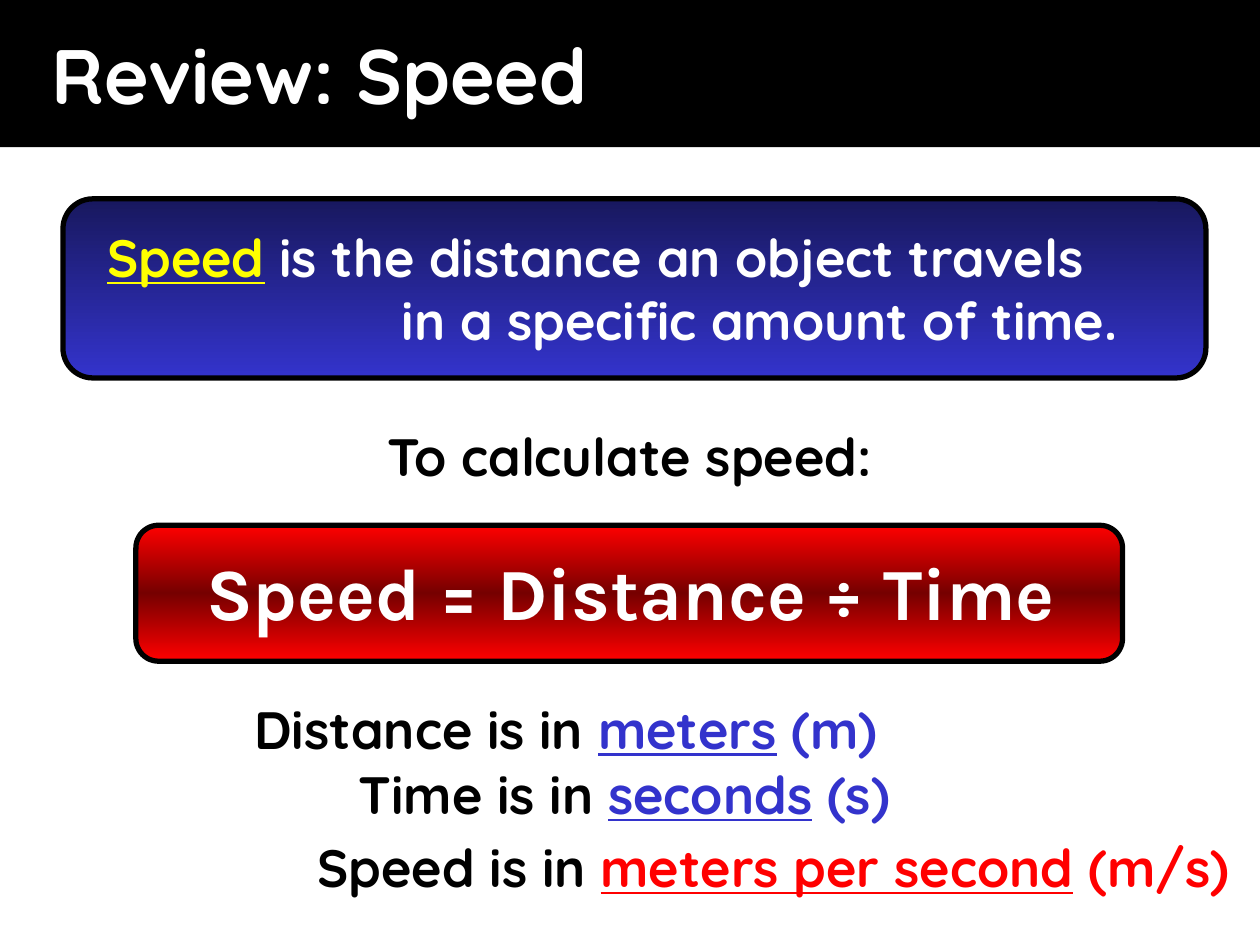
from copy import deepcopy

from pptx import Presentation
from pptx.dml.color import RGBColor as RGB
from pptx.enum.shapes import MSO_SHAPE as Preset
from pptx.enum.text import MSO_ANCHOR as Anchor, PP_ALIGN as Align
from pptx.oxml.ns import qn
from pptx.util import Cm, Pt

THEME = {
    "black": "000000", "white": "FFFFFF", "yellow": "FFFF00",
    "blue": "3333CC", "navy": "18185E", "red": "FF0000", "maroon": "760000",
    "body": ("Quicksand", 30), "title": ("Quicksand", 44), "formula": ("Karla", 42),
    "outline": 3,
}
SLIDE_W, SLIDE_H = 25.4, 19.05

TITLE = "Review: Speed"
DEFINITION = [
    (0, [("Speed", "yellow", True), (" is the distance an object travels", "white", False)]),
    (5.94, [("in a specific amount of time.", "white", False)]),
]
PROMPT = "To calculate speed:"
FORMULA = "Speed = Distance ÷ Time"
UNITS = [
    ("Distance", "meters", "m", "blue", 4.88, 13.92),
    ("Time", "seconds", "s", "blue", 6.98, 15.24),
    ("Speed", "meters per second", "m/s", "red", 6.15, 16.71),
]
PANELS = {
    "definition": ((1.27, 4.01, 23.04, 3.61), ["navy", "blue"]),
    "formula": ((2.74, 10.59, 19.89, 2.74), ["red", "maroon", "red"]),
}


def color(key):
    return RGB.from_string(THEME[key])


def apply(target, values):
    for attribute, value in values.items():
        setattr(target, attribute, value)


def write(frame, lines, style="body", align=Align.LEFT, anchor=Anchor.TOP):
    apply(frame, {"word_wrap": True, "vertical_anchor": anchor})
    face, size = THEME[style]
    for number, (indent, runs) in enumerate(lines):
        paragraph = frame.add_paragraph() if number else frame.paragraphs[0]
        paragraph.alignment = align
        if indent:
            margins = paragraph._p.get_or_add_pPr()
            margins.set("marL", str(Cm(indent)))
            margins.set("indent", "0")
        for words, ink, underlined in runs:
            run = paragraph.add_run()
            run.text = words
            apply(run.font, {"name": face, "size": Pt(size), "bold": True,
                             "underline": underlined})
            run.font.color.rgb = color(ink)


def add_text(slide, box, lines, **format_values):
    frame = slide.shapes.add_textbox(*map(Cm, box)).text_frame
    write(frame, lines, **format_values)


def add_panel(slide, box, inks):
    panel = slide.shapes.add_shape(Preset.ROUNDED_RECTANGLE, *map(Cm, box))
    panel.shadow.inherit = False
    panel.line.color.rgb = color("black")
    panel.line.width = Pt(THEME["outline"])
    panel.fill.gradient()
    panel.fill.gradient_angle = 270
    stops = panel._element.spPr.find(qn("a:gradFill")).find(qn("a:gsLst"))
    for _ in inks[2:]:
        stops.append(deepcopy(stops[0]))
    for number, (stop, ink) in enumerate(zip(panel.fill.gradient_stops, inks)):
        stop.color.rgb = color(ink)
        stop.position = number / (len(inks) - 1)


def main():
    deck = Presentation()
    apply(deck, {"slide_width": Cm(SLIDE_W), "slide_height": Cm(SLIDE_H)})
    slide = deck.slides.add_slide(deck.slide_layouts[6])

    banner = slide.shapes.add_shape(Preset.RECTANGLE, 0, 0, Cm(SLIDE_W), Cm(2.97))
    banner.shadow.inherit = False
    banner.fill.solid()
    banner.fill.fore_color.rgb = color("black")
    banner.line.fill.background()
    write(banner.text_frame, [(0.79, [(TITLE, "white", False)])],
          style="title", anchor=Anchor.MIDDLE)

    for box, inks in PANELS.values():
        add_panel(slide, box, inks)

    add_text(slide, (1.91, 4.42, 21.79, 2.79), DEFINITION)
    add_text(slide, (0, 8.43, SLIDE_W, 1.52), [(0, [(PROMPT, "black", False)])],
             align=Align.CENTER)
    add_text(slide, (3.3, 10.9, 18.82, 2.03), [(0, [(FORMULA, "white", False)])],
             style="formula", align=Align.CENTER)

    for quantity, unit, symbol, ink, left, top in UNITS:
        runs = [(f"{quantity} is in ", "black", False), (unit, ink, True),
                (f" ({symbol})", ink, False)]
        add_text(slide, (left, top, SLIDE_W - left, 1.52), [(0, runs)])

    deck.save("out.pptx")


if __name__ == "__main__":
    main()
